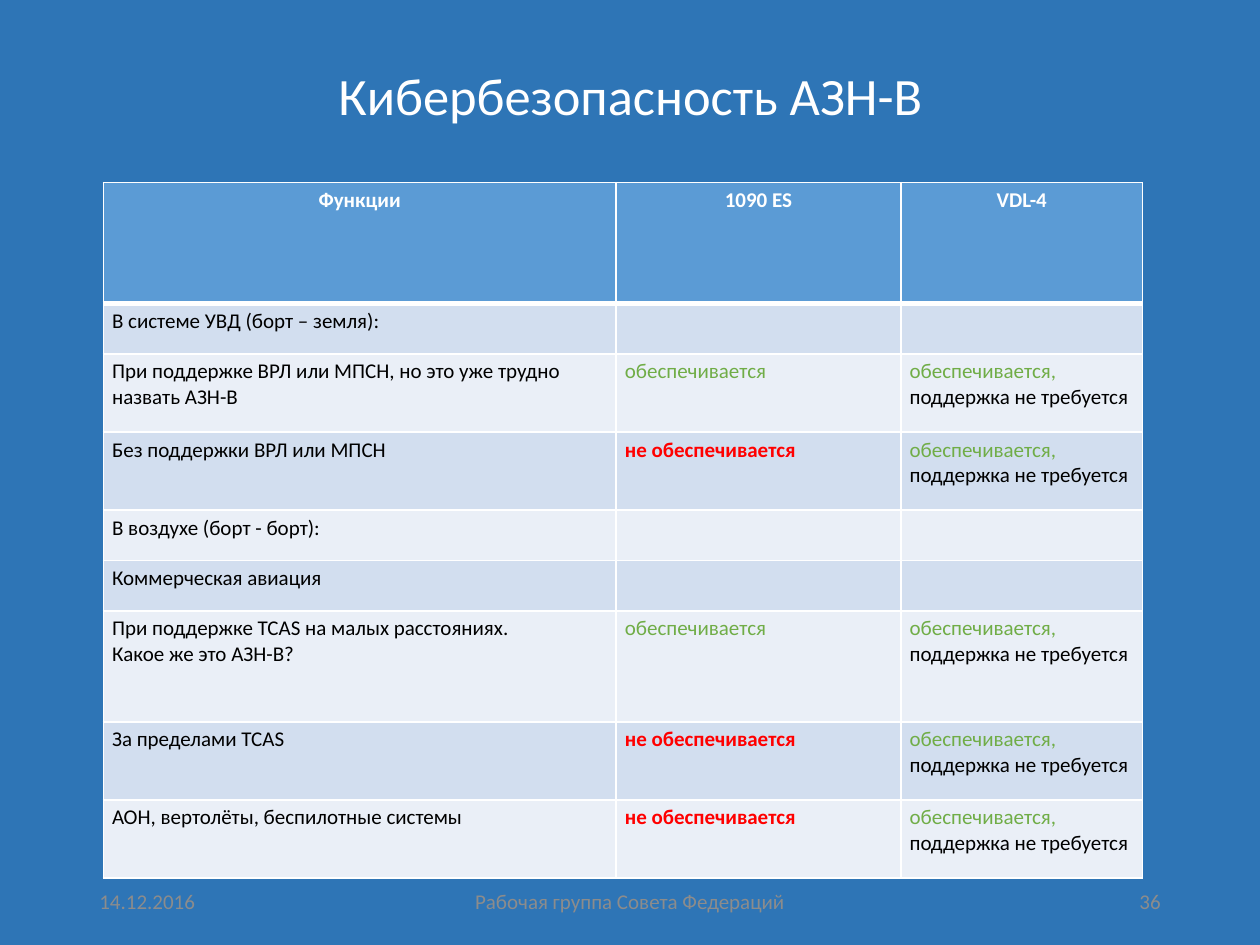
from lxml.etree import SubElement
from pptx import Presentation
from pptx.dml.color import RGBColor
from pptx.enum.text import MSO_ANCHOR, PP_ALIGN
from pptx.oxml.ns import qn
from pptx.util import Inches, Pt

FONT = "Calibri"
COLORS = {
    "background": "2E75B6",
    "header": "5B9BD5",
    "odd_row": "D2DEEF",
    "even_row": "EAEFF7",
    "white": "FFFFFF",
    "black": "000000",
    "provided": "70AD47",
    "not_provided": "FF0000",
    "footer": "8C8C8C",
}
COLUMN_WIDTHS = [4.07, 2.26, 1.92]
ROW_HEIGHTS = [0.96, 0.4, 0.62, 0.62, 0.4, 0.4, 0.88, 0.62, 0.62]

YES = "обеспечивается"
NO = "не обеспечивается"
VDL_ANSWER = "обеспечивается,\nподдержка не требуется"
HEADINGS = ["Функции", "1090 ES", "VDL-4"]
FUNCTIONS = [
    ("В системе УВД (борт – земля):", "", ""),
    ("При поддержке ВРЛ или МПСН, но это уже трудно назвать АЗН-В", YES, VDL_ANSWER),
    ("Без поддержки ВРЛ или МПСН", NO, VDL_ANSWER),
    ("В воздухе (борт - борт):", "", ""),
    ("Коммерческая авиация", "", ""),
    ("При поддержке TCAS на малых расстояниях.\nКакое же это АЗН-В?", YES, VDL_ANSWER),
    ("За пределами TCAS", NO, VDL_ANSWER),
    ("АОН, вертолёты, беспилотные системы", NO, VDL_ANSWER),
]
FOOTERS = [
    ("14.12.2016", 0.69, 2.25, PP_ALIGN.LEFT),
    ("Рабочая группа Совета Федераций", 3.31, 3.38, PP_ALIGN.CENTER),
    ("36", 7.06, 2.25, PP_ALIGN.RIGHT),
]


def rgb(name):
    return RGBColor.from_string(COLORS[name])


def format_paragraph(paragraph, size, color, align=PP_ALIGN.LEFT, bold=False):
    paragraph.alignment = align
    for run in paragraph.runs:
        run.font.name = FONT
        run.font.size = Pt(size)
        run.font.bold = bold
        run.font.color.rgb = rgb(color)


def add_label(slide, text, left, top, width, height, size, color, align):
    """Add a single-line text box, centred vertically."""
    box = slide.shapes.add_textbox(Inches(left), Inches(top), Inches(width), Inches(height))
    frame = box.text_frame
    frame.word_wrap = True
    frame.vertical_anchor = MSO_ANCHOR.MIDDLE
    frame.text = text
    format_paragraph(frame.paragraphs[0], size, color, align)
    return frame.paragraphs[0]


def set_borders(cell, top=1, bottom=1):
    """Draw white borders; widths are in points."""
    properties = cell._tc.get_or_add_tcPr()
    for side, width in (("L", 1), ("R", 1), ("T", top), ("B", bottom)):
        line = SubElement(properties, qn(f"a:ln{side}"), w=str(Pt(width)))
        fill = SubElement(line, qn("a:solidFill"))
        SubElement(fill, qn("a:srgbClr"), val=COLORS["white"])


def fill_cell(cell, text, color, top=1, bottom=1):
    set_borders(cell, top, bottom)
    cell.fill.solid()
    cell.fill.fore_color.rgb = rgb(color)
    cell.margin_left = cell.margin_right = Inches(0.07)
    cell.margin_top = cell.margin_bottom = Inches(0.04)
    cell.text_frame.text = text


def text_color(text):
    if text == NO:
        return "not_provided"
    return "provided" if text.startswith(YES) else "black"


def add_function_table(slide):
    table = slide.shapes.add_table(
        len(ROW_HEIGHTS), len(COLUMN_WIDTHS), Inches(0.82), Inches(1.45),
        Inches(sum(COLUMN_WIDTHS)), Inches(sum(ROW_HEIGHTS)),
    ).table
    for column, width in zip(table.columns, COLUMN_WIDTHS):
        column.width = Inches(width)
    for row, height in zip(table.rows, ROW_HEIGHTS):
        row.height = Inches(height)

    for cell, heading in zip(table.rows[0].cells, HEADINGS):
        fill_cell(cell, heading, "header", bottom=3)
        format_paragraph(cell.text_frame.paragraphs[0], 12, "white", PP_ALIGN.CENTER, True)

    for number, texts in enumerate(FUNCTIONS, start=1):
        row_color = "odd_row" if number % 2 else "even_row"
        for cell, text in zip(table.rows[number].cells, texts):
            fill_cell(cell, text, row_color, top=3 if number == 1 else 1)
            for paragraph in cell.text_frame.paragraphs:
                format_paragraph(paragraph, 12, text_color(paragraph.text),
                                 bold=paragraph.text == NO)


def main():
    deck = Presentation()
    deck.slide_width, deck.slide_height = Inches(10), Inches(7.5)
    slide = deck.slides.add_slide(deck.slide_layouts[6])
    slide.background.fill.solid()
    slide.background.fill.fore_color.rgb = rgb("background")

    title = add_label(slide, "Кибербезопасность АЗН-В", 1.77, 0.24, 6.47, 1.09,
                      30, "white", PP_ALIGN.CENTER)
    title.line_spacing = 0.9
    add_function_table(slide)
    for text, left, width, align in FOOTERS:
        add_label(slide, text, left, 6.95, width, 0.4, 12, "footer", align)
    deck.save("out.pptx")


if __name__ == "__main__":
    main()
